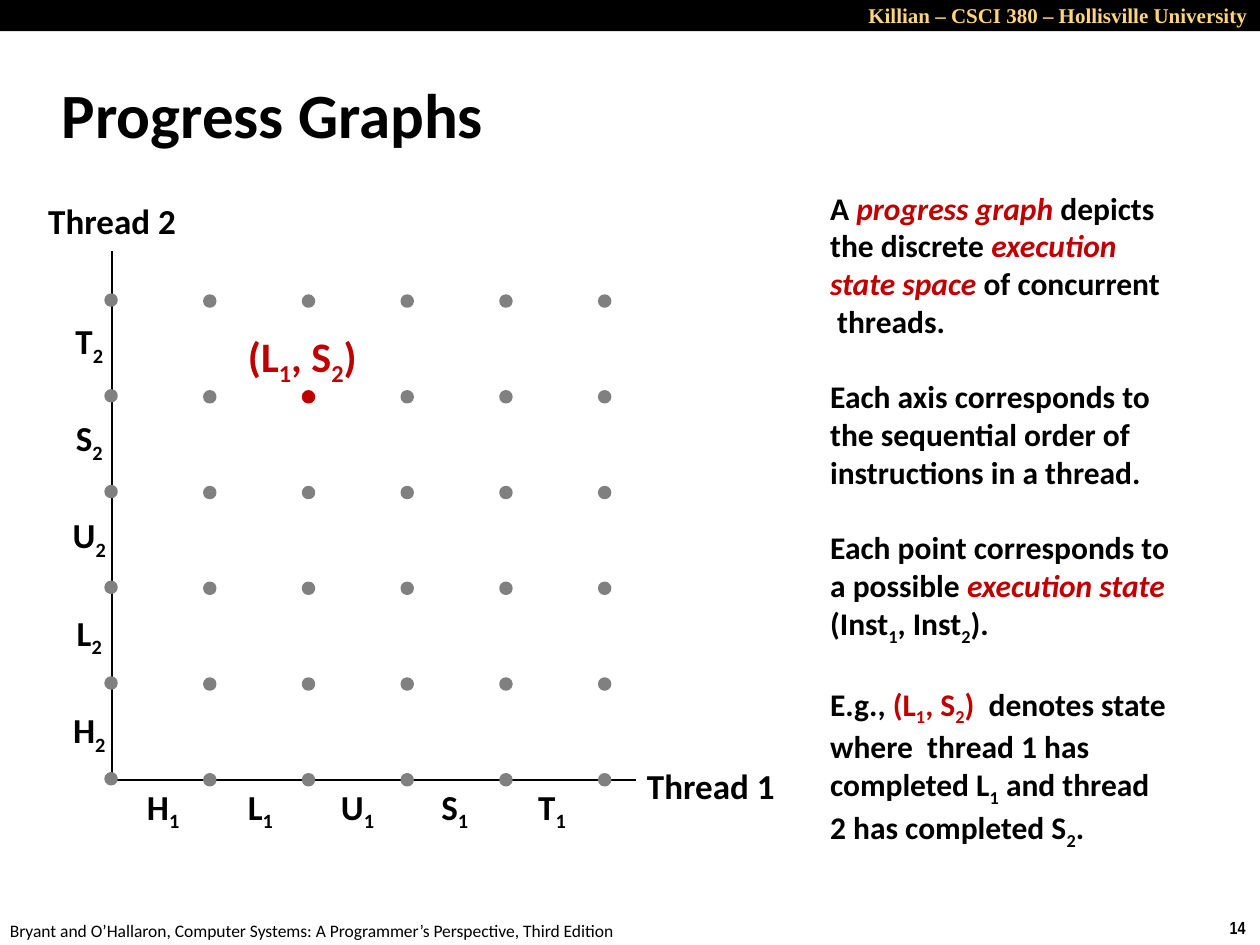
from pptx import Presentation
from pptx.dml.color import RGBColor
from pptx.enum.shapes import MSO_CONNECTOR, MSO_SHAPE
from pptx.enum.text import MSO_ANCHOR, MSO_AUTO_SIZE, PP_ALIGN
from pptx.oxml.ns import qn
from pptx.util import Cm, Pt
from lxml.etree import SubElement

COLORS = {"black": "000000", "gold": "FFD579", "red": "C00000", "gray": "808080"}
RGB = {name: RGBColor.from_string(code) for name, code in COLORS.items()}


def add_runs(par, runs, size, color="black", bold=True, face="Calibri"):
    """Add (text, style) runs; style letters: r red, i italic, s subscript, n new line first."""
    for text, style in runs:
        if "n" in style:
            par.add_line_break()
        run = par.add_run()
        run.text = text
        font = run.font
        font.name, font.size, font.bold = face, Pt(size), bold
        font.italic = "i" in style
        font.color.rgb = RGB["red" if "r" in style else color]
        if "s" in style:
            run._r.get_or_add_rPr().set("baseline", "-25000")


def add_label(left, top, width, height, runs, size, align=PP_ALIGN.CENTER, **look):
    """Add a one-line text box, lengths in cm."""
    box = slide.shapes.add_textbox(Cm(left), Cm(top), Cm(width), Cm(height))
    frame = box.text_frame
    frame.word_wrap = False
    frame.vertical_anchor = MSO_ANCHOR.MIDDLE
    par = frame.paragraphs[0]
    par.alignment = align
    add_runs(par, runs, size, **look)


deck = Presentation()
deck.slide_width, deck.slide_height = Cm(25.4), Cm(19.05)
slide = deck.slides.add_slide(deck.slide_layouts[1])

# Header band and footer
band = slide.shapes.add_shape(MSO_SHAPE.RECTANGLE, 0, 0, Cm(25.4), Cm(0.63))
band.shadow.inherit = False
band.fill.solid()
band.fill.fore_color.rgb = RGB["black"]
band.line.fill.background()
add_label(11.43, -0.07, 13.97, 0.77, [("Killian – CSCI 380 – Hollisville University", "")],
          12, PP_ALIGN.RIGHT, color="gold", face="Times New Roman")
add_label(-0.05, 18.42, 12.9, 0.68,
          [("Bryant and O’Hallaron, Computer Systems: A Programmer’s Perspective, Third Edition", "")],
          10, PP_ALIGN.LEFT, bold=False)
add_label(24.54, 18.36, 0.86, 0.68, [("14", "")], 10, PP_ALIGN.LEFT, face="Arial Narrow")

# Title
title = slide.shapes.title
title.left, title.top, title.width, title.height = Cm(0.99), Cm(1.22), Cm(21.08), Cm(2.11)
title.text_frame.vertical_anchor = MSO_ANCHOR.MIDDLE
title.text_frame.paragraphs[0].alignment = PP_ALIGN.LEFT
add_runs(title.text_frame.paragraphs[0], [("Progress Graphs", "")], 36)

# Explanation
notes = [
    [("A ", ""), ("progress graph ", "ri"), ("depicts", ""),
     ("the discrete ", "n"), ("execution", "ri"),
     ("state space", "rin"), (" of concurrent", ""), (" threads.", "n")],
    [("Each axis corresponds to", ""), ("the sequential order of", "n"),
     ("instructions in a thread.", "n")],
    [("Each point corresponds to", ""), ("a possible ", "n"), ("execution state", "ri"),
     ("(Inst", "n"), ("1", "s"), (", Inst", ""), ("2", "s"), (").", "")],
    [("E.g., ", ""), ("(L", "r"), ("1", "rs"), (", S", "r"), ("2", "rs"), (")  ", "r"),
     ("denotes state", ""), ("where  thread 1 has", "n"),
     ("completed L", "n"), ("1", "s"), (" and thread", ""),
     ("2 has completed S", "n"), ("2", "s"), (".", "")],
]
body = slide.placeholders[1]
body.left, body.top, body.width, body.height = Cm(16.48), Cm(3.81), Cm(7.39), Cm(13.34)
frame = body.text_frame
frame.word_wrap = False
frame.auto_size = MSO_AUTO_SIZE.NONE
frame.vertical_anchor = MSO_ANCHOR.MIDDLE
for i, runs in enumerate(notes):
    par = frame.add_paragraph() if i else frame.paragraphs[0]
    par.space_before = Pt(21.5 if i else 0)
    props = par._p.get_or_add_pPr()
    props.set("marL", "0")
    props.set("indent", "0")
    SubElement(props, qn("a:buNone"))
    add_runs(par, runs, 18)

# Axes
for right, top in [(12.83, 15.72), (2.26, 5.05)]:
    axis = slide.shapes.add_connector(MSO_CONNECTOR.STRAIGHT, Cm(2.26), Cm(15.72),
                                      Cm(right), Cm(top))
    axis.line.color.rgb = RGB["black"]
    axis.line.width = Pt(1)
    SubElement(axis._element.spPr, qn("a:effectLst"))
add_label(12.78, 15.27, 3.1, 1.12, [("Thread 1", "")], 20)
add_label(0.71, 3.89, 3.1, 1.12, [("Thread 2", "")], 20)

# Instruction labels, one step apart along each axis
for i, name in enumerate("HLUST"):
    add_label(2.69 + 1.96 * i, 15.75, 1.2, 1.12, [(name, ""), ("1", "s")], 20)
    add_label(1.2, 14.2 - 1.96 * i, 1.2, 1.12, [(name, ""), ("2", "s")], 20)

# State points; the first column sits slightly higher
SIZE = 0.2
for col in range(6):
    base = 15.72 if col else 15.7
    for row in range(6):
        dot = slide.shapes.add_shape(MSO_SHAPE.OVAL, Cm(2.24 + 1.99 * col - SIZE / 2),
                                     Cm(base - 1.93 * row - SIZE / 2), Cm(SIZE), Cm(SIZE))
        color = RGB["red" if (col, row) == (2, 4) else "gray"]
        dot.shadow.inherit = False
        dot.fill.solid()
        dot.fill.fore_color.rgb = color
        dot.line.color.rgb = color
        dot.line.width = Pt(2)
add_label(4.75, 6.6, 3, 1.27,
          [("(L", "r"), ("1", "rs"), (", S", "r"), ("2", "rs"), (")", "r")], 24, PP_ALIGN.LEFT)

deck.save("out.pptx")
